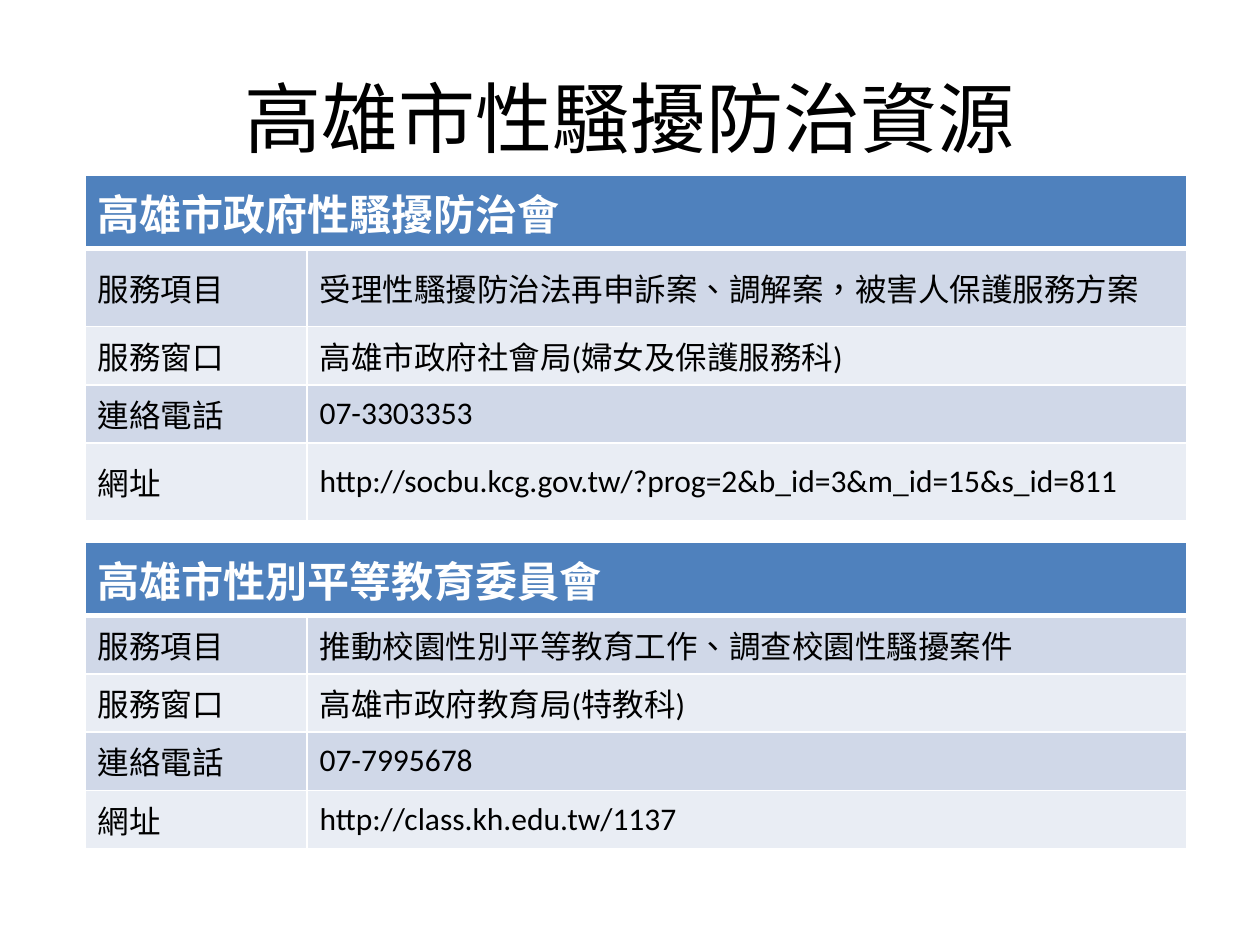
from lxml import etree
from pptx import Presentation
from pptx.dml.color import RGBColor
from pptx.enum.lang import MSO_LANGUAGE_ID
from pptx.enum.text import MSO_ANCHOR, PP_ALIGN
from pptx.oxml.ns import qn
from pptx.util import Pt

EMU_PER_PX = 914400 / 126
MIDDLE, TOP = MSO_ANCHOR.MIDDLE, MSO_ANCHOR.TOP
CENTER = PP_ALIGN.CENTER
CHINESE = MSO_LANGUAGE_ID.TRADITIONAL_CHINESE
FONT = "Calibri"
BLACK = RGBColor(0x00, 0x00, 0x00)
WHITE = RGBColor(0xFF, 0xFF, 0xFF)
BLUE = RGBColor(0x4F, 0x81, 0xBD)
BAND_DARK = RGBColor(0xD0, 0xD8, 0xE8)
BAND_LIGHT = RGBColor(0xE9, 0xED, 0xF4)

LABELS = ["服務項目", "服務窗口", "連絡電話", "網址"]
COLUMN_WIDTHS = [222, 880]
COMMITTEE = [
    "受理性騷擾防治法再申訴案、調解案，被害人保護服務方案",
    "高雄市政府社會局(婦女及保護服務科)",
    "07-3303353",
    "http://socbu.kcg.gov.tw/?prog=2&b_id=3&m_id=15&s_id=811",
]
EDUCATION = [
    "推動校園性別平等教育工作、調查校園性騷擾案件",
    "高雄市政府教育局(特教科)",
    "07-7995678",
    "http://class.kh.edu.tw/1137",
]


def px(length):
    return round(length * EMU_PER_PX)


def write(frame, text, size, color, bold=False):
    para = frame.paragraphs[0]
    para.font.name = FONT
    para.font.size = Pt(size)
    para.font.bold = bold
    para.font.color.rgb = color
    span = para.add_run()
    span.text = text
    span.font.language_id = CHINESE
    return para


def set_borders(cell, bottom):
    properties = cell._tc.get_or_add_tcPr()
    widths = {"a:lnL": 1, "a:lnR": 1, "a:lnT": 1, "a:lnB": bottom}
    for index, (tag, width) in enumerate(widths.items()):
        line = etree.Element(qn(tag), w=str(Pt(width)))
        fill = etree.SubElement(line, qn("a:solidFill"))
        etree.SubElement(fill, qn("a:srgbClr"), val=str(WHITE))
        properties.insert(index, line)


def style_cell(cell, fill, anchor, bottom=1):
    cell.fill.solid()
    cell.fill.fore_color.rgb = fill
    cell.vertical_anchor = anchor
    set_borders(cell, bottom)


def add_title(page, text, left, top, width, height):
    title = page.shapes.title
    title.left, title.top = px(left), px(top)
    title.width, title.height = px(width), px(height)
    title.text_frame.vertical_anchor = MIDDLE
    write(title.text_frame, text, 44, BLACK).alignment = CENTER


def add_resource_table(page, box, heading, anchor, details, row_heights):
    frame = page.shapes.add_table(len(row_heights), 2, *map(px, box))
    table = frame.table
    for column, width in zip(table.columns, COLUMN_WIDTHS):
        column.width = px(width)
    for row, height in zip(table.rows, row_heights):
        row.height = px(height)
    frame.width, frame.height = px(box[2]), px(box[3])

    header = table.cell(0, 0)
    header.merge(table.cell(0, 1))
    for cell in table.rows[0].cells:
        style_cell(cell, BLUE, anchor, bottom=3)
    write(header.text_frame, heading, 24, WHITE, bold=True)

    for index, texts in enumerate(zip(LABELS, details), start=1):
        band = BAND_DARK if index % 2 else BAND_LIGHT
        for cell, text in zip(table.rows[index].cells, texts):
            style_cell(cell, band, MIDDLE)
            write(cell.text_frame, text, 18, BLACK)


def main():
    deck = Presentation()
    deck.slide_width, deck.slide_height = px(1260), px(945)
    page = deck.slides.add_slide(deck.slide_layouts[5])
    add_title(page, "高雄市性騷擾防治資源", 63, 38, 1134, 158)
    add_resource_table(page, (85, 175, 1102, 320), "高雄市政府性騷擾防治會",
                       TOP, COMMITTEE, [62, 78, 45, 45, 78])
    add_resource_table(page, (85, 542, 1102, 273), "高雄市性別平等教育委員會",
                       MIDDLE, EDUCATION, [69, 51, 51, 51, 51])
    deck.save("out.pptx")


if __name__ == "__main__":
    main()
